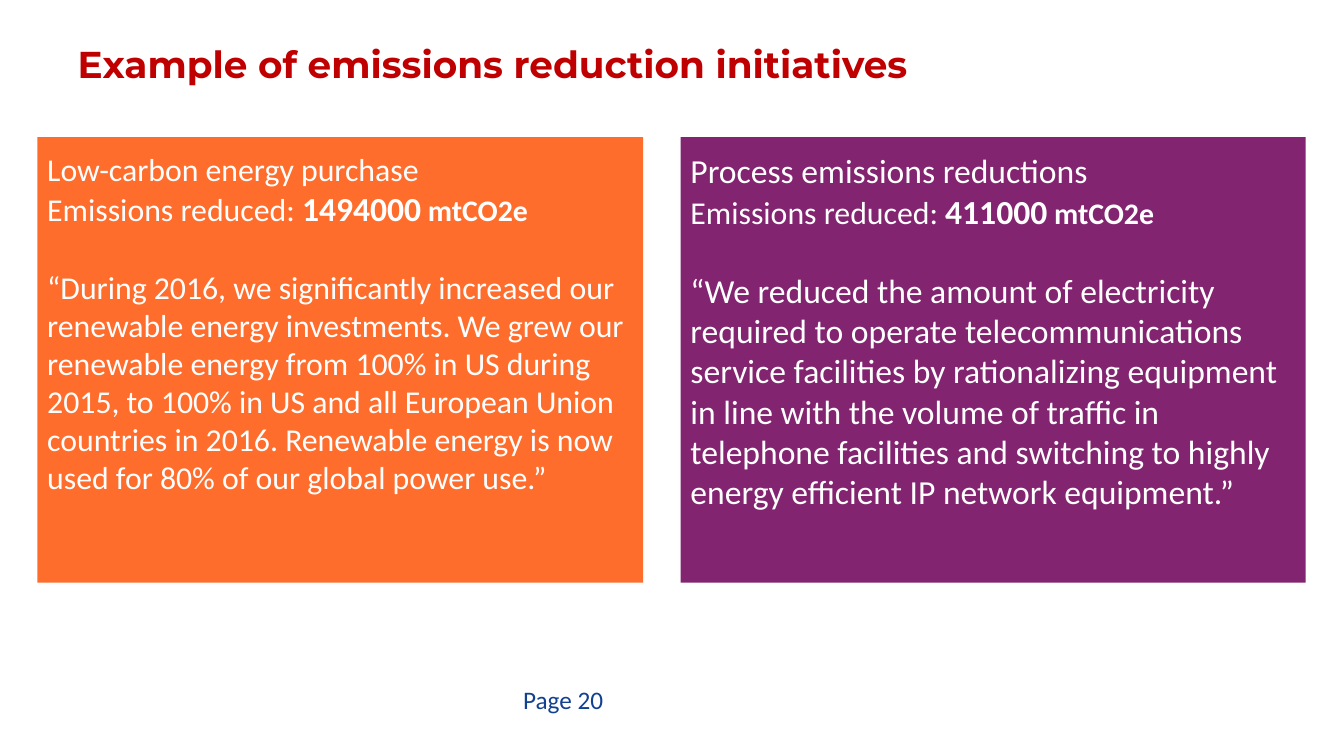
from pptx import Presentation
from pptx.dml.color import RGBColor
from pptx.enum.shapes import MSO_SHAPE
from pptx.enum.text import MSO_ANCHOR, PP_ALIGN
from pptx.util import Inches, Pt

RECTANGLE = MSO_SHAPE.RECTANGLE
TOP = MSO_ANCHOR.TOP
LEFT = PP_ALIGN.LEFT

COLORS = {"title": "C00000", "page": "124191", "text": "FFFFFF",
          "energy": "FF6D2C", "process": "82246F"}
PANEL_TOP, PANEL_HEIGHT = 1.36, 4.42
QUOTE_GAP = 27.7


def add_run(paragraph, text, size, color, bold=False, name="Calibri"):
    run = paragraph.add_run()
    run.text = text
    run.font.color.rgb = RGBColor.from_string(COLORS[color])
    for attribute, value in {"size": Pt(size), "bold": bold, "name": name}.items():
        setattr(run.font, attribute, value)


def format_frame(frame, vertical_margin):
    values = {"word_wrap": True, "vertical_anchor": TOP,
              "margin_left": Inches(0.1), "margin_right": Inches(0.1),
              "margin_top": Inches(vertical_margin),
              "margin_bottom": Inches(vertical_margin)}
    for attribute, value in values.items():
        setattr(frame, attribute, value)


presentation = Presentation()
presentation.slide_width = Inches(13.33)
presentation.slide_height = Inches(7.5)
slide = presentation.slides.add_slide(presentation.slide_layouts[5])

# Title
title = slide.shapes.title
title.left, title.top, title.width, title.height = map(Inches, (0.67, 0.41, 12, 0.82))
format_frame(title.text_frame, 0.05)
paragraph = title.text_frame.paragraphs[0]
paragraph.alignment = LEFT
paragraph.line_spacing = 0.9
add_run(paragraph, "Example of emissions reduction initiatives", 26.7, "title", True, "Montserrat")

# Page number
page = slide.shapes.add_textbox(*map(Inches, (5.09, 6.74, 3.11, 0.4)))
format_frame(page.text_frame, 0.05)
add_run(page.text_frame.paragraphs[0], "Page 20", 18, "page")

# Initiative panels: left, width, fill, body size, heading, amount, quote
initiatives = [
    (0.37, 6.01, "energy", 22.7, "Low-carbon energy purchase", "1494000",
     "“During 2016, we significantly increased our renewable energy investments. "
     "We grew our renewable energy from 100% in US during 2015, to 100% in US and "
     "all European Union countries in 2016. Renewable energy is now used for 80% "
     "of our global power use.”"),
    (6.75, 6.2, "process", 24, "Process emissions reductions", "411000",
     "“We reduced the amount of electricity required to operate telecommunications "
     "service facilities by rationalizing equipment in line with the volume of "
     "traffic in telephone facilities and switching to highly energy efficient IP "
     "network equipment.”"),
]
for left, width, fill, size, heading, amount, quote in initiatives:
    panel = slide.shapes.add_shape(
        RECTANGLE, *map(Inches, (left, PANEL_TOP, width, PANEL_HEIGHT)))
    panel.shadow.inherit = False
    panel.fill.solid()
    panel.fill.fore_color.rgb = RGBColor.from_string(COLORS[fill])
    panel.line.fill.background()
    frame = panel.text_frame
    format_frame(frame, 0.13)

    # Each paragraph is a list of (text, size, bold) runs
    lines = [
        [(heading, size, False)],
        [("Emissions reduced: ", 22.7, False), (amount, 24, True), (" mtCO2e", 21.3, True)],
        [(quote, size, False)],
    ]
    for index, runs in enumerate(lines):
        paragraph = frame.paragraphs[0] if index == 0 else frame.add_paragraph()
        paragraph.alignment = LEFT
        for text, run_size, bold in runs:
            add_run(paragraph, text, run_size, "text", bold)
    paragraph.space_before = Pt(QUOTE_GAP)

presentation.save("out.pptx")
